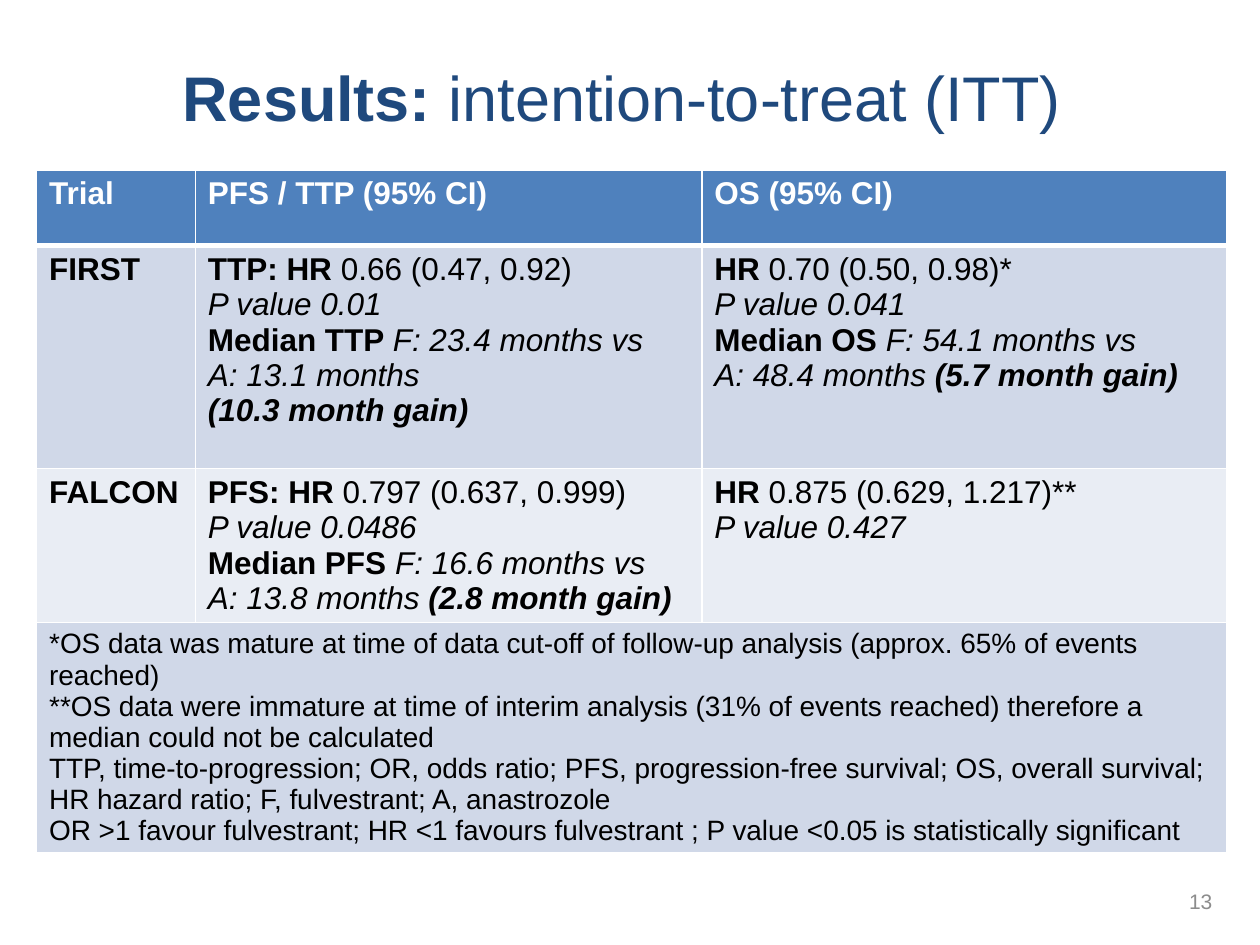
from dataclasses import dataclass

from lxml.etree import SubElement
from pptx import Presentation
from pptx.dml.color import RGBColor
from pptx.enum.text import MSO_ANCHOR, PP_ALIGN
from pptx.oxml.ns import qn
from pptx.util import Inches, Pt


@dataclass(frozen=True)
class Theme:
    font: str = "Arial"
    title: str = "1F497D"
    header: str = "4F81BD"
    band_dark: str = "D0D8E8"
    band_light: str = "E9EDF4"
    white: str = "FFFFFF"
    black: str = "000000"
    grey: str = "8C8C8C"
    title_size: int = 36
    body_size: int = 18
    note_size: int = 16
    number_size: int = 12


THEME = Theme()

# Each paragraph is a list of (text, style) runs; b is bold, i is italic
HEADER = ["Trial", "PFS / TTP (95% CI)", "OS (95% CI)"]
FIRST = [
    [[("FIRST", "b")]],
    [
        [("TTP: HR ", "b"), ("0.66 (0.47, 0.92)", "")],
        [("P value 0.01", "i")],
        [("Median TTP ", "b"), ("F: 23.4 months vs", "i")],
        [("A: 13.1 months", "i")],
        [("(10.3 month gain)", "bi")],
    ],
    [
        [("HR ", "b"), ("0.70 (0.50, 0.98)*", "")],
        [("P value 0.041", "i")],
        [("Median OS ", "b"), ("F: 54.1 months vs", "i")],
        [("A: 48.4 months ", "i"), ("(5.7 month gain)", "bi")],
    ],
]
FALCON = [
    [[("FALCON", "b")]],
    [
        [("PFS: HR ", "b"), ("0.797 (0.637, 0.999)", "")],
        [("P value 0.0486", "i")],
        [("Median PFS ", "b"), ("F: 16.6 months vs", "i")],
        [("A: 13.8 months ", "i"), ("(2.8 month gain)", "bi")],
    ],
    [
        [("HR ", "b"), ("0.875 (0.629, 1.217)**", "")],
        [("P value 0.427", "i")],
    ],
]
NOTES = [
    "*OS data was mature at time of data cut-off of follow-up analysis "
    "(approx. 65% of events reached)",
    "**OS data were immature at time of interim analysis (31% of events reached) "
    "therefore a median could not be calculated",
    "TTP, time-to-progression; OR, odds ratio; PFS, progression-free survival; "
    "OS, overall survival; HR hazard ratio; F, fulvestrant; A, anastrozole",
    "OR >1 favour fulvestrant; HR <1 favours fulvestrant ; "
    "P value <0.05 is statistically significant",
]
COLUMN_WIDTHS = [1.26, 4.02, 4.17]
ROW_HEIGHTS = [0.6, 1.77, 1.22, 1.82]


def write(frame, paragraphs, size, color, align=PP_ALIGN.LEFT, line_spacing=None):
    """Fill a text frame run by run."""
    for index, runs in enumerate(paragraphs):
        para = frame.add_paragraph() if index else frame.paragraphs[0]
        para.alignment = align
        if line_spacing:
            para.line_spacing = line_spacing
        for text, style in runs:
            span = para.add_run()
            span.text = text
            font = span.font
            font.name, font.size = THEME.font, Pt(size)
            font.bold, font.italic = "b" in style, "i" in style
            font.color.rgb = RGBColor.from_string(color)


def paint_cell(cell, fill, bottom_width=1):
    """Give a cell white borders and a solid fill."""
    properties = cell._tc.get_or_add_tcPr()
    for side in ("lnL", "lnR", "lnT", "lnB"):
        width = bottom_width if side == "lnB" else 1
        line = SubElement(properties, qn(f"a:{side}"), w=str(Pt(width)))
        solid = SubElement(line, qn("a:solidFill"))
        SubElement(solid, qn("a:srgbClr"), val=THEME.white)
    cell.fill.solid()
    cell.fill.fore_color.rgb = RGBColor.from_string(fill)


def place_title(page, left, top, width, height):
    box = page.shapes.title
    box.left, box.top, box.width, box.height = map(Inches, (left, top, width, height))
    frame = box.text_frame
    frame.word_wrap = True
    frame.vertical_anchor = MSO_ANCHOR.MIDDLE
    write(frame, [[("Results: ", "b"), ("intention-to-treat (ITT) ", "")]],
          THEME.title_size, THEME.title, PP_ALIGN.CENTER, 0.9)


def place_results(page, left, top):
    size = sum(COLUMN_WIDTHS), sum(ROW_HEIGHTS)
    table = page.shapes.add_table(len(ROW_HEIGHTS), len(COLUMN_WIDTHS),
                                  *map(Inches, (left, top, *size))).table
    for column, width in zip(table.columns, COLUMN_WIDTHS):
        column.width = Inches(width)
    for row, height in zip(table.rows, ROW_HEIGHTS):
        row.height = Inches(height)

    # Header and trial rows
    header = [[[(text, "b")]] for text in HEADER]
    bands = [
        (header, THEME.header, THEME.white, 3),
        (FIRST, THEME.band_dark, THEME.black, 1),
        (FALCON, THEME.band_light, THEME.black, 1),
    ]
    for row, (contents, fill, color, bottom_width) in zip(table.rows, bands):
        for cell, paragraphs in zip(row.cells, contents):
            paint_cell(cell, fill, bottom_width)
            write(cell.text_frame, paragraphs, THEME.body_size, color)

    # Footnotes across the full width
    note_cells = list(table.rows[len(bands)].cells)
    note_cells[0].merge(note_cells[-1])
    for cell in note_cells:
        paint_cell(cell, THEME.band_dark)
    write(note_cells[0].text_frame, [[(note, "b" * 0)] for note in NOTES],
          THEME.note_size, THEME.black)


def place_page_number(page, left, top, width, height):
    box = page.shapes.add_textbox(*map(Inches, (left, top, width, height)))
    frame = box.text_frame
    frame.word_wrap = True
    frame.vertical_anchor = MSO_ANCHOR.MIDDLE
    write(frame, [[("13", "")]], THEME.number_size, THEME.grey, PP_ALIGN.RIGHT)


def main():
    deck = Presentation()
    deck.slide_width, deck.slide_height = Inches(10), Inches(7.5)
    page = deck.slides.add_slide(deck.slide_layouts.get_by_name("Title Only"))
    place_title(page, 0.28, 0.29, 9.45, 1.03)
    place_results(page, 0.29, 1.35)
    place_page_number(page, 7.47, 6.95, 2.25, 0.4)
    deck.save("out.pptx")


if __name__ == "__main__":
    main()
